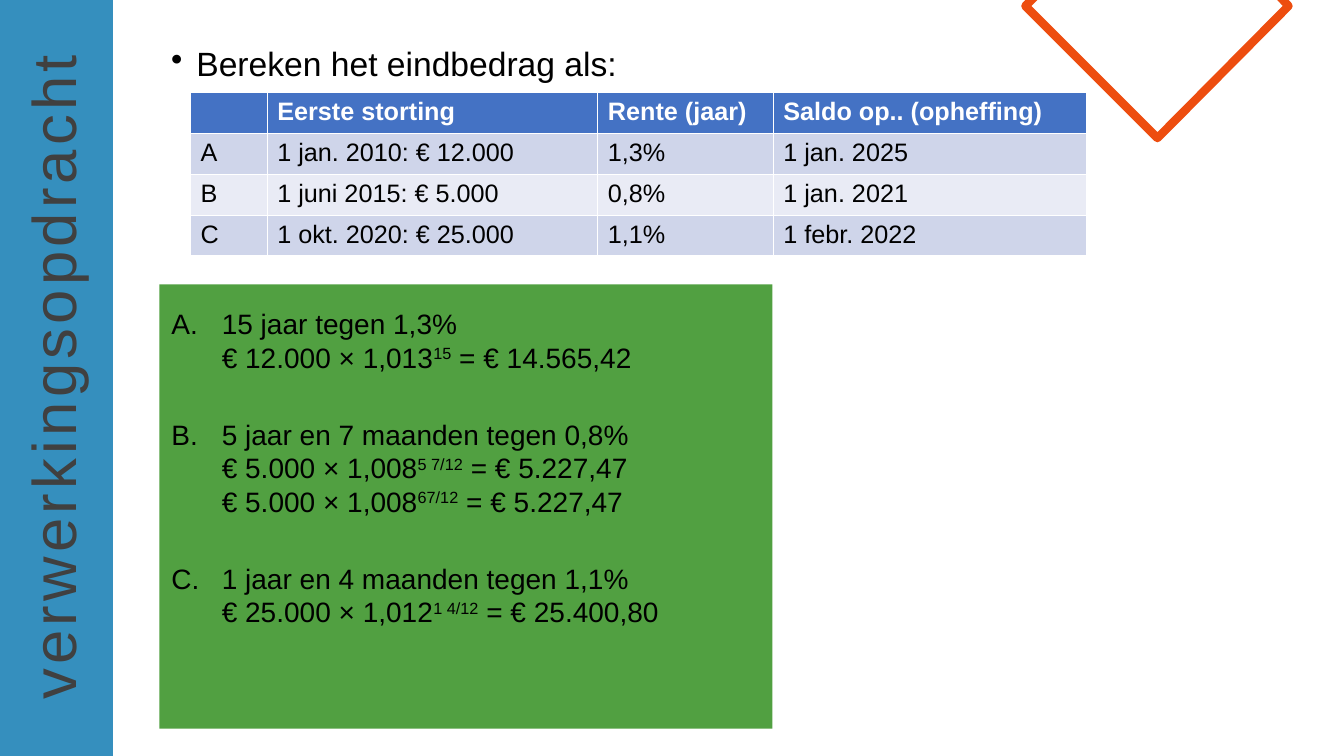
import lxml.etree
import pptx
import pptx.dml.color
import pptx.enum.shapes
import pptx.enum.text
import pptx.oxml.ns
import pptx.util

Inches, Pt = pptx.util.Inches, pptx.util.Pt
THEME = {
    "font": "Arial", "title_size": 44, "heading_size": 24, "answer_size": 20, "table_size": 18,
    "text": "000000", "title": "404040", "white": "FFFFFF", "sidebar": "1A80B6",
    "diamond": "ED4D0F", "answers": "51A041", "header": "4472C4", "bands": ("CFD5EA", "E9EBF5"),
}


def style_font(font, size, color="text", bold=False):
    font.name = THEME["font"]
    font.size = Pt(THEME[size])
    font.bold = bold
    font.color.rgb = pptx.dml.color.RGBColor.from_string(THEME[color])


def add_bullet(paragraph, indent, tag, **attributes):
    properties = paragraph._p.get_or_add_pPr()
    properties.set("marL", str(Inches(indent)))
    properties.set("indent", str(-Inches(indent)))
    lxml.etree.SubElement(properties, pptx.oxml.ns.qn(tag), **attributes)


presentation = pptx.Presentation()
presentation.slide_width, presentation.slide_height = Inches(13.33), Inches(7.5)
slide = presentation.slides.add_slide(presentation.slide_layouts[5])
shapes = slide.shapes
rectangle = pptx.enum.shapes.MSO_SHAPE.RECTANGLE

# Sidebar, placed behind the title
sidebar = shapes.add_shape(rectangle, 0, 0, Inches(1.12), presentation.slide_height)
sidebar.shadow.inherit = False
sidebar.line.fill.background()
sidebar.fill.solid()
sidebar.fill.fore_color.rgb = pptx.dml.color.RGBColor.from_string(THEME["sidebar"])
sidebar_color = sidebar._element.spPr.find(".//" + pptx.oxml.ns.qn("a:srgbClr"))
lxml.etree.SubElement(sidebar_color, pptx.oxml.ns.qn("a:alpha"), val="88000")
shapes._spTree.insert(2, sidebar._element)

# Vertical title
title = shapes.title
title.left, title.top, title.width, title.height = map(Inches, (-2.83, 3.27, 6.7, 0.84))
title.rotation = 270
title.text_frame.text = "verwerkingsopdracht"
title.text_frame.word_wrap = False
title.text_frame.auto_size = pptx.enum.text.MSO_AUTO_SIZE.NONE
title.text_frame.vertical_anchor = pptx.enum.text.MSO_ANCHOR.TOP
title_paragraph = title.text_frame.paragraphs[0]
title_paragraph.alignment = pptx.enum.text.PP_ALIGN.LEFT
title_font = title_paragraph.runs[0].font
style_font(title_font, "title_size", "title")
title_font._element.set("spc", "300")

# Diamond cut off by the top edge
corners = [(12.66, -0.07), (12.78, 0.06), (11.48, 1.37), (10.17, 0.06)]
builder = shapes.build_freeform(Inches(10.3), Inches(-0.07))
builder.add_line_segments([(Inches(x), Inches(y)) for x, y in corners], close=True)
diamond = builder.convert_to_shape()
diamond.shadow.inherit = False
diamond.fill.background()
diamond.line.color.rgb = pptx.dml.color.RGBColor.from_string(THEME["diamond"])
diamond.line.width = Pt(6)

# Heading
heading = shapes.add_textbox(Inches(1.6), Inches(0.38), Inches(8), Inches(0.5))
heading.text_frame.word_wrap = True
heading.text_frame.text = "Bereken het eindbedrag als:"
heading_paragraph = heading.text_frame.paragraphs[0]
add_bullet(heading_paragraph, 0.25, "a:buChar", char="•")
style_font(heading_paragraph.runs[0].font, "heading_size")

# Table of deposits
rows = [
    ("", "Eerste storting", "Rente (jaar)", "Saldo op.. (opheffing)"),
    ("A", "1 jan. 2010: € 12.000", "1,3%", "1 jan. 2025"),
    ("B", "1 juni 2015: € 5.000", "0,8%", "1 jan. 2021"),
    ("C", "1 okt. 2020: € 25.000", "1,1%", "1 febr. 2022"),
]
widths = (0.76, 3.28, 1.74, 3.11)
table = shapes.add_table(len(rows), len(widths), Inches(1.89), Inches(0.92),
                         Inches(sum(widths)), Inches(1.62)).table
for column, width in zip(table.columns, widths):
    column.width = Inches(width)
for row_index, row in enumerate(rows):
    is_header = row_index == 0
    fill = THEME["header"] if is_header else THEME["bands"][(row_index - 1) % 2]
    for column_index, text in enumerate(row):
        cell = table.cell(row_index, column_index)
        cell.text = text
        cell.fill.solid()
        cell.fill.fore_color.rgb = pptx.dml.color.RGBColor.from_string(fill)
        style_font(cell.text_frame.paragraphs[0].font, "table_size",
                   "white" if is_header else "text", is_header)
        for run in cell.text_frame.paragraphs[0].runs:
            style_font(run.font, "table_size", "white" if is_header else "text", is_header)

# Worked answers: in each line, the part between ^ signs is an exponent
answers = [
    ("15 jaar tegen 1,3%", "€ 12.000 × 1,013^15^ = € 14.565,42"),
    ("5 jaar en 7 maanden tegen 0,8%", "€ 5.000 × 1,008^5 7/12^ = € 5.227,47",
     "€ 5.000 × 1,008^67/12^ = € 5.227,47"),
    ("1 jaar en 4 maanden tegen 1,1%", "€ 25.000 × 1,012^1 4/12^ = € 25.400,80"),
]
panel = shapes.add_shape(rectangle, Inches(1.58), Inches(2.82), Inches(6.08), Inches(4.41))
panel.shadow.inherit = False
panel.line.fill.background()
panel.fill.solid()
panel.fill.fore_color.rgb = pptx.dml.color.RGBColor.from_string(THEME["answers"])
frame = panel.text_frame
frame.word_wrap = True
frame.vertical_anchor = pptx.enum.text.MSO_ANCHOR.TOP
frame.margin_left, frame.margin_top = Inches(0.12), Inches(0.22)
for answer_index, lines in enumerate(answers):
    paragraph = frame.add_paragraph() if answer_index else frame.paragraphs[0]
    paragraph.alignment = pptx.enum.text.PP_ALIGN.LEFT
    paragraph.space_before = Pt(31 if answer_index else 0)
    add_bullet(paragraph, 0.5, "a:buAutoNum", type="alphaUcPeriod")
    for line_index, line in enumerate(lines):
        if line_index:
            paragraph.add_line_break()
        for part_index, part in enumerate(line.split("^")):
            run = paragraph.add_run()
            run.text = part
            style_font(run.font, "answer_size")
            if part_index % 2:
                run.font._element.set("baseline", "30000")

presentation.save("out.pptx")
